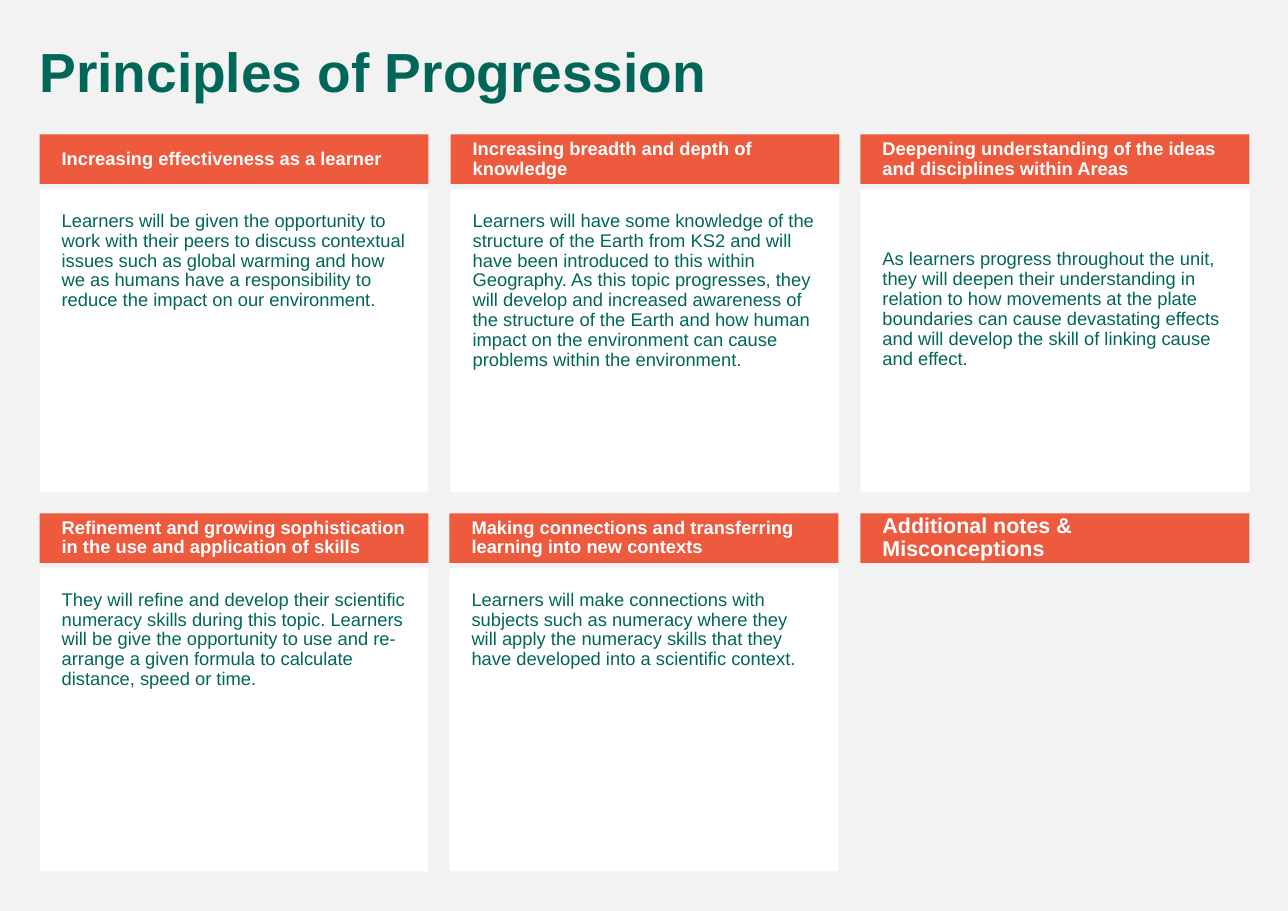
from dataclasses import dataclass

from pptx import Presentation
from pptx.dml.color import RGBColor
from pptx.enum.shapes import MSO_SHAPE
from pptx.enum.text import MSO_ANCHOR, PP_ALIGN
from pptx.slide import Slide
from pptx.text.text import TextFrame
from pptx.util import Inches, Pt

COLORS = {"background": "F2F2F2", "panel": "FFFFFF", "header": "ED5A3E",
          "green": "006758", "white": "FFFFFF"}
FONT = "Arial"

# Grid of cards, in inches
CARD_WIDTH = 3.53
HEADER_HEIGHT = 0.45
PANEL_HEIGHT = 2.75
PANEL_OFFSET = 0.5
LEFT_COLUMN, RIGHT_COLUMN = 0.36, 7.81
TOP_ROW, BOTTOM_ROW = 1.22, 4.66


@dataclass(frozen=True)
class Card:
    left: float
    top: float
    heading: str
    body: str = ""
    heading_size: int = 12
    body_inset: float = 0.2


CARDS = [
    Card(LEFT_COLUMN, TOP_ROW, "Increasing effectiveness as a learner",
         "Learners will be given the opportunity to work with their peers to discuss "
         "contextual issues such as global warming and how we as humans have "
         "a responsibility to reduce the impact on our environment."),
    Card(4.09, TOP_ROW, "Increasing breadth and depth of knowledge",
         "Learners will have some knowledge of the structure of the Earth from KS2 "
         "and will have been introduced to this within Geography. As this topic "
         "progresses, they will develop and increased awareness of the structure of "
         "the Earth and how human impact on the environment can cause problems within "
         "the environment."),
    Card(RIGHT_COLUMN, TOP_ROW,
         "Deepening understanding of the ideas and disciplines within Areas",
         "As learners progress throughout the unit, they will deepen their "
         "understanding in relation to how movements at the plate boundaries can cause "
         "devastating effects and will develop the skill of linking cause and effect.",
         body_inset=0.55),
    Card(LEFT_COLUMN, BOTTOM_ROW,
         "Refinement and growing sophistication in the use and application of skills",
         "They will refine and develop their scientific numeracy skills during this "
         "topic. Learners will be give the opportunity to use and re-arrange a given "
         "formula to calculate distance, speed or time."),
    Card(4.08, BOTTOM_ROW,
         "Making connections and transferring learning into new contexts",
         "Learners will make connections with subjects such as numeracy where they "
         "will apply the numeracy skills that they have developed into a scientific "
         "context."),
    Card(RIGHT_COLUMN, BOTTOM_ROW, "Additional notes & Misconceptions",
         heading_size=14),
]


def write_text(frame: TextFrame, text: str, size: int, color: str, bold: bool,
               insets: tuple[float, float, float, float], anchor: MSO_ANCHOR) -> None:
    """Fill a frame with one run; insets are left, top, right, bottom."""
    frame.word_wrap = True
    frame.vertical_anchor = anchor
    (frame.margin_left, frame.margin_top,
     frame.margin_right, frame.margin_bottom) = map(Inches, insets)
    paragraph = frame.paragraphs[0]
    paragraph.alignment = PP_ALIGN.LEFT
    paragraph.line_spacing = 0.9
    run = paragraph.add_run()
    run.text = text
    run.font.name = FONT
    run.font.size = Pt(size)
    run.font.bold = bold
    run.font.color.rgb = RGBColor.from_string(COLORS[color])


def add_block(slide: Slide, left: float, top: float, height: float,
              color: str) -> TextFrame:
    """Add a plain filled rectangle and return its text frame."""
    shape = slide.shapes.add_shape(MSO_SHAPE.RECTANGLE, Inches(left), Inches(top),
                                   Inches(CARD_WIDTH), Inches(height))
    shape.shadow.inherit = False
    shape.fill.solid()
    shape.fill.fore_color.rgb = RGBColor.from_string(COLORS[color])
    shape.line.fill.background()
    return shape.text_frame


def add_card(slide: Slide, card: Card) -> None:
    if card.body:
        panel = add_block(slide, card.left, card.top + PANEL_OFFSET, PANEL_HEIGHT, "panel")
        write_text(panel, card.body, 12, "green", False,
                   (0.2, card.body_inset, 0.2, 0.2), MSO_ANCHOR.TOP)
    header = add_block(slide, card.left, card.top, HEADER_HEIGHT, "header")
    write_text(header, card.heading, card.heading_size, "white", True,
               (0.2, 0.05, 0.1, 0.05), MSO_ANCHOR.MIDDLE)


def main() -> None:
    presentation = Presentation()
    presentation.slide_width = Inches(11.69)
    presentation.slide_height = Inches(8.27)
    slide = presentation.slides.add_slide(presentation.slide_layouts[6])

    # Background
    slide.background.fill.solid()
    slide.background.fill.fore_color.rgb = RGBColor.from_string(COLORS["background"])

    # Title
    title = slide.shapes.add_textbox(Inches(0.26), Inches(0.36),
                                     Inches(11.08), Inches(0.65))
    write_text(title.text_frame, "Principles of Progression", 36, "green", True,
               (0.1, 0.05, 0.1, 0.05), MSO_ANCHOR.TOP)

    # Cards
    for card in CARDS:
        add_card(slide, card)

    presentation.save("out.pptx")


if __name__ == "__main__":
    main()
